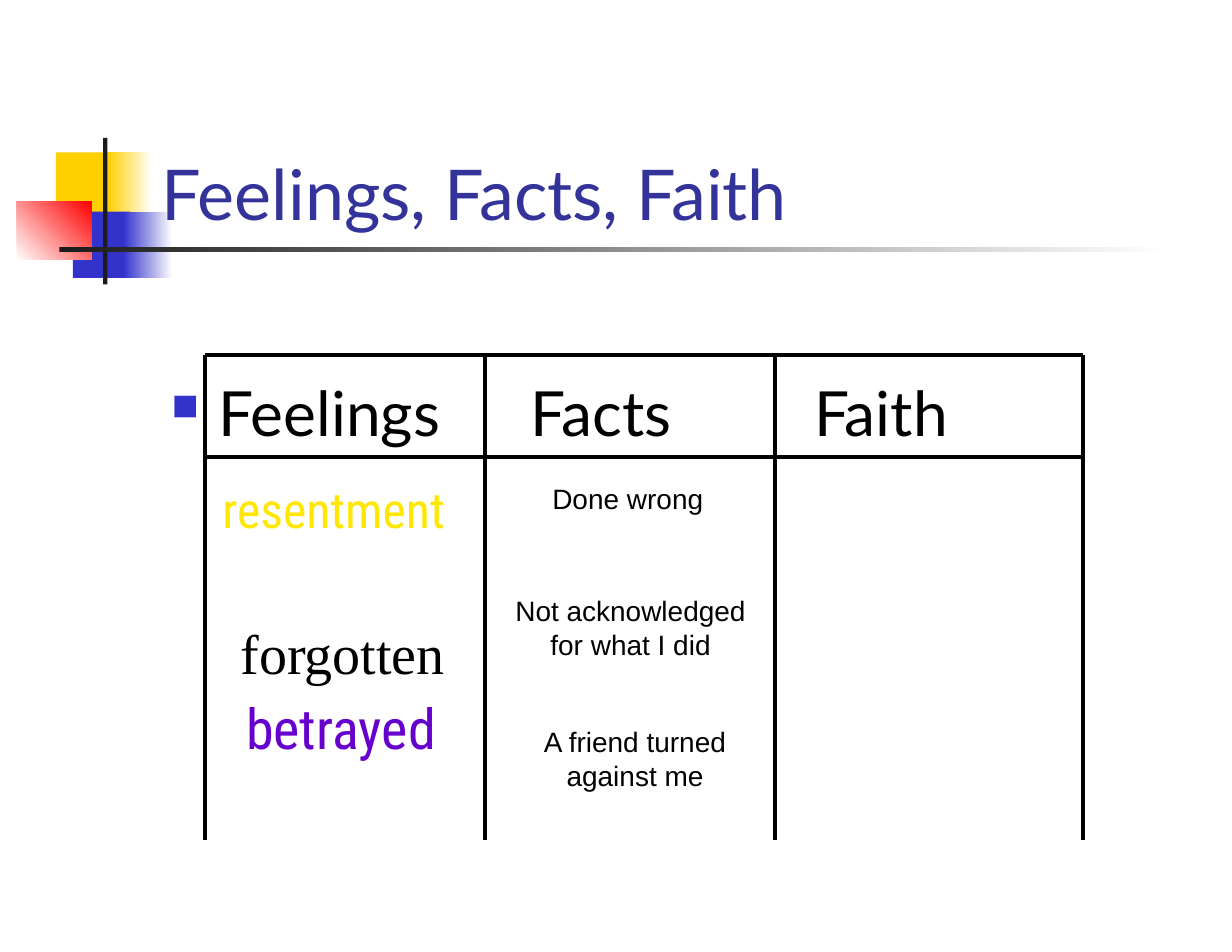
from lxml import etree
from pptx import Presentation
from pptx.dml.color import RGBColor
from pptx.enum.shapes import MSO_CONNECTOR, MSO_SHAPE
from pptx.enum.text import MSO_ANCHOR, MSO_AUTO_SIZE, PP_ALIGN
from pptx.oxml.ns import qn
from pptx.util import Inches, Pt

THEME = {
    "yellow": "FFCF01", "blue": "3333CC", "red": "FF0000", "white": "FFFFFF",
    "dark": "1C1C1C", "title": "333399", "black": "000000",
    "gold": "FFE701", "purple": "6600CC",
    "title_size": 45, "heading_size": 40, "word_size": 36,
    "small_word_size": 32, "fact_size": 18, "rule_width": 3,
    "main_font": "Lato", "word_font": "Roboto Condensed",
    "serif_font": "Times New Roman", "fact_font": "Arial",
}


def color(name):
    return RGBColor.from_string(THEME[name])


def write_text(shape, lines, font, size, color_name, align, insets, wrap=False):
    frame = shape.text_frame
    frame.text = "\n".join(lines)
    side, top = Inches(insets[0]), Inches(insets[1])
    frame_format = {
        "word_wrap": wrap, "auto_size": MSO_AUTO_SIZE.NONE,
        "margin_left": side, "margin_right": side,
        "margin_top": top, "margin_bottom": top,
    }
    for name, value in frame_format.items():
        setattr(frame, name, value)
    for paragraph in frame.paragraphs:
        paragraph.alignment = align
        paragraph.font.name = THEME[font]
        paragraph.font.size = Pt(THEME[size])
        paragraph.font.color.rgb = color(color_name)


presentation = Presentation()
presentation.slide_width, presentation.slide_height = Inches(11), Inches(8.5)
slide = presentation.slides.add_slide(presentation.slide_layouts[5])
shapes = slide.shapes

# Decorative blocks: left, top, width, height, colours, gradient angle
blocks = [
    (0.5, 1.36, 0.53, 0.59, ["yellow"], 0),
    (0.96, 1.36, 0.4, 0.59, ["yellow", "white"], 0),
    (0.65, 1.89, 0.51, 0.59, ["blue"], 0),
    (1.1, 1.89, 0.44, 0.59, ["blue", "white"], 0),
    (0.15, 1.8, 0.67, 0.52, ["white", "red"], 45),
    (0.92, 1.23, 0.04, 1.31, ["dark"], 0),
    (0.53, 2.21, 9.9, 0.04, ["dark", "white"], 0),
]
for *box, colors, angle in blocks:
    block = shapes.add_shape(MSO_SHAPE.RECTANGLE, *map(Inches, box))
    block.shadow.inherit = False
    block.line.fill.background()
    if len(colors) == 1:
        block.fill.solid()
        block.fill.fore_color.rgb = color(colors[0])
    else:
        block.fill.gradient()
        block.fill.gradient_angle = angle
        for stop, name in zip(block.fill.gradient_stops, colors):
            stop.color.rgb = color(name)

# Title, in front of the blocks
title = shapes.title
title_box = {"left": 1.33, "top": 1.33, "width": 9.37, "height": 0.82}
for name, value in title_box.items():
    setattr(title, name, Inches(value))
write_text(title, ["Feelings, Facts, Faith"], "main_font", "title_size", "title",
           PP_ALIGN.LEFT, (0.11, 0.06), wrap=True)
title.text_frame.vertical_anchor = MSO_ANCHOR.BOTTOM
block.element.addnext(title.element)

# Column headings; the first one carries the square bullet
bullet_indent = Inches(0.42)
for text, left, width in [("Feelings", 1.53, 2.75), ("Facts", 4.74, 2.1), ("Faith", 7.27, 2.3)]:
    heading = shapes.add_textbox(Inches(left), Inches(3.34), Inches(width), Inches(0.67))
    write_text(heading, [text], "main_font", "heading_size", "black",
               PP_ALIGN.LEFT, (0, 0), wrap=True)
    if text == "Feelings":
        properties = heading.text_frame.paragraphs[0]._p.get_or_add_pPr()
        properties.set("marL", str(bullet_indent))
        properties.set("indent", str(-bullet_indent))
        bullet_color = etree.Element(qn("a:buClr"))
        etree.SubElement(bullet_color, qn("a:srgbClr"), val=THEME["blue"])
        bullet_size = etree.Element(qn("a:buSzPct"), val="60000")
        bullet = etree.Element(qn("a:buChar"), char="■")
        for position, element in enumerate([bullet_color, bullet_size, bullet]):
            properties.insert(position, element)

# Grid: two horizontal rules and four column rules
columns, rows, bottom = [1.83, 4.33, 6.92, 9.67], [3.17, 4.08], 7.5
rules = [(columns[0], y, columns[-1], y) for y in rows]
rules += [(x, rows[0], x, bottom) for x in columns]
for ends in rules:
    rule = shapes.add_connector(MSO_CONNECTOR.STRAIGHT, *map(Inches, ends))
    rule.line.color.rgb = color("black")
    rule.line.width = Pt(THEME["rule_width"])
    etree.SubElement(rule.element.spPr, qn("a:effectLst"))

# Feelings: text, box, font, size, colour, top inset
feelings = [
    ("resentment", (1.92, 4.25, 2.12, 0.85), "word_font", "small_word_size", "gold", 0.02),
    ("forgotten", (2.17, 5.42, 1.78, 0.67), "serif_font", "word_size", "black", 0.1),
    ("betrayed", (2.17, 6.17, 1.75, 1.25), "word_font", "word_size", "purple", 0.02),
]
for text, box, font, size, color_name, inset in feelings:
    word = shapes.add_textbox(*map(Inches, box))
    write_text(word, [text], font, size, color_name, PP_ALIGN.CENTER, (0, inset))

# Facts
facts = [
    (["Done wrong"], (4.83, 4.25, 1.55, 0.4)),
    (["Not acknowledged", "for what I did"], (4.5, 5.25, 2.26, 0.7)),
    (["A friend turned", "against me"], (4.75, 6.42, 1.84, 0.7)),
]
for lines, box in facts:
    fact = shapes.add_textbox(*map(Inches, box))
    write_text(fact, lines, "fact_font", "fact_size", "black", PP_ALIGN.CENTER, (0.1, 0.05))

presentation.save("out.pptx")
